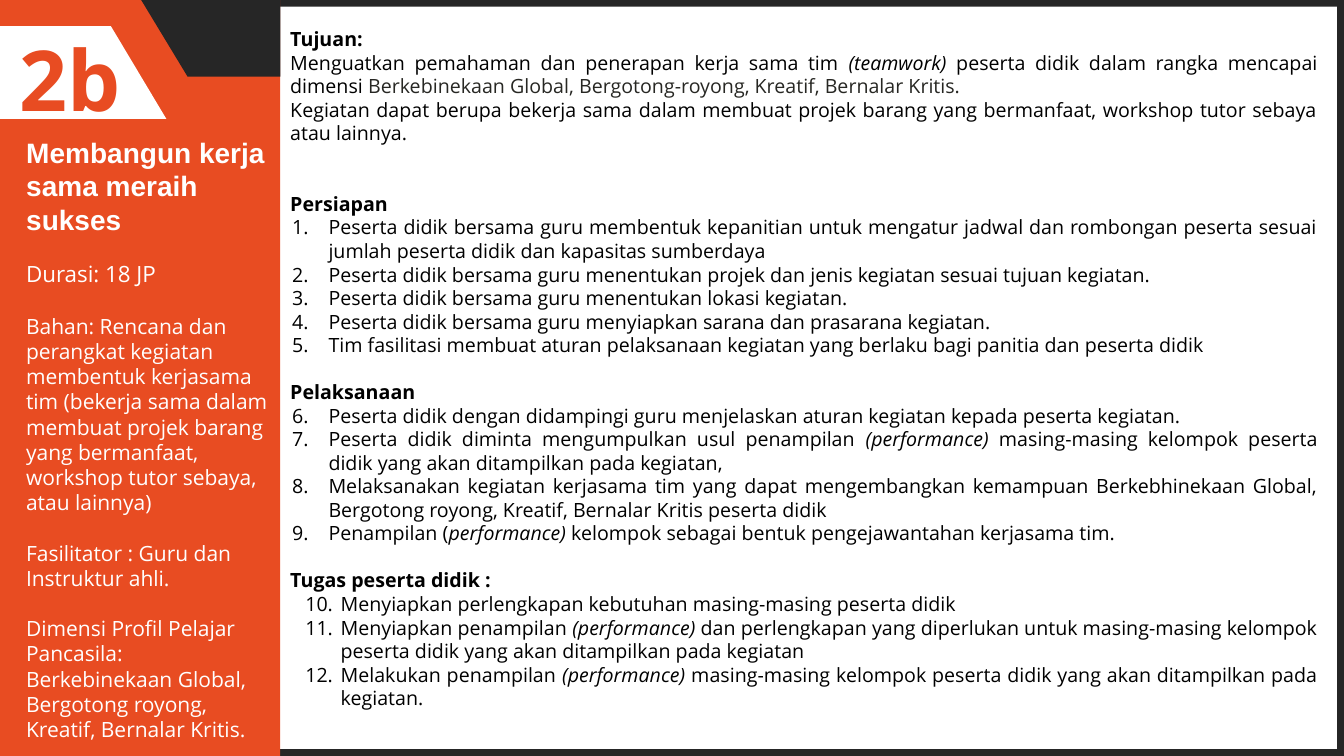
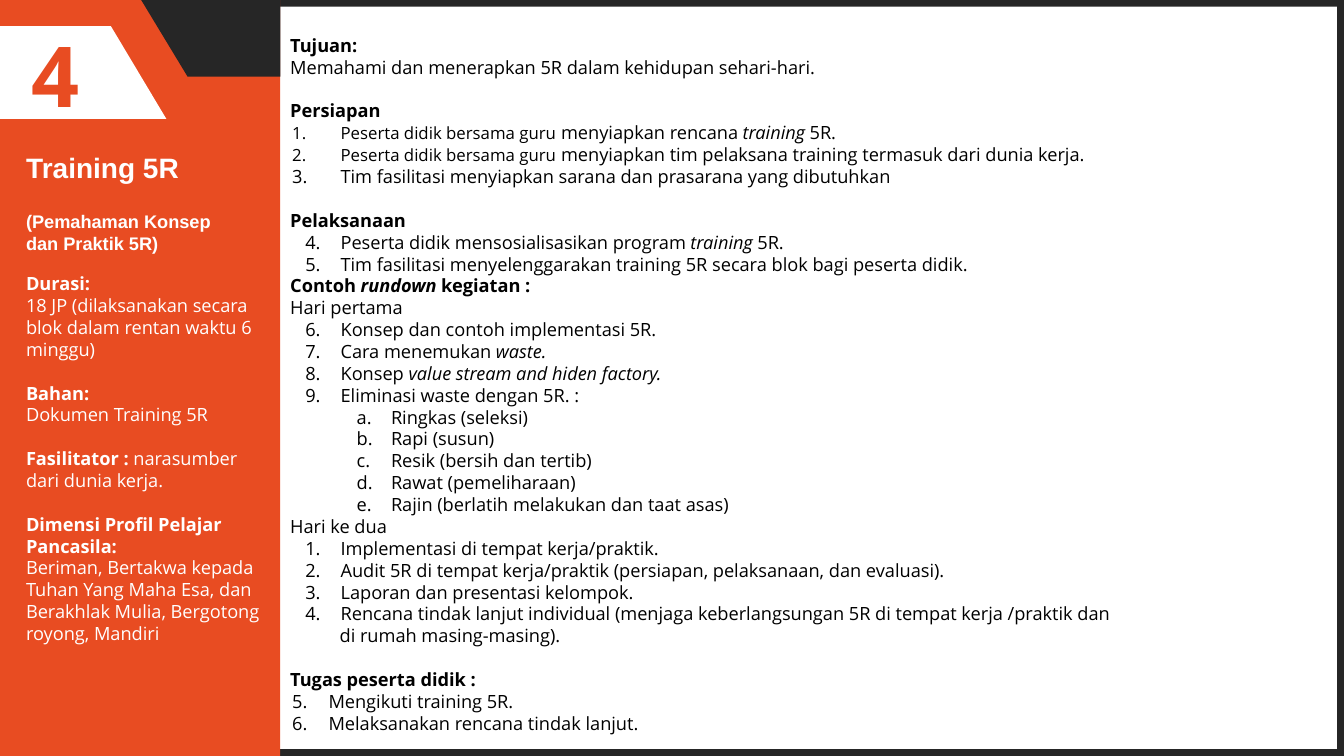
from lxml.etree import SubElement
from pptx import Presentation
from pptx.dml.color import RGBColor as RGB
from pptx.enum.shapes import MSO_SHAPE as Shape
from pptx.enum.text import MSO_ANCHOR as Anchor, PP_ALIGN as Align
from pptx.oxml.ns import qn
from pptx.util import Inches, Pt

WIDE, HIGH, PANEL = 13.33, 7.5, 2.78
COLOR = {"white": "FFFFFF", "black": "000000", "dark": "262626",
         "orange": "E84C22", "grey": "272723"}
SANS, LEAD = "Open Sans", 1.2

# list kind: left indent, hanging indent (inches), numbering scheme
LISTS = {
    "num": (0.38, 0.36, "arabicPeriod"),
    "task": (0.5, 0.35, "arabicPeriod"),
    "wide": (0.5, 0.48, "arabicPeriod"),
    "abc": (1, 0.34, "alphaLcPeriod"),
    "more": (0.49, 0, None),
}

# panel rows: gap before (pt), size, font, bold, text
# body groups: kind, blank lines before, paragraphs
# a paragraph is a string, or a list of strings and (text, style) pairs
SLIDES = [
    {
        "mark": "2b", "mark_box": (0, 0.22, 1.4, 1.11),
        "title": "Membangun kerja sama meraih sukses",
        "title_box": (0.16, 1.29, 2.62, 1.1), "panel_top": 2.53,
        "panel": [
            (0, 16, SANS, False, "Durasi: 18 JP"),
            (19, 15, SANS, False, "Bahan: Rencana dan"),
            (0, 15, SANS, False,
             "perangkat kegiatan membentuk kerjasama tim (bekerja sama dalam "
             "membuat projek barang yang bermanfaat, workshop tutor sebaya, "
             "atau lainnya)"),
            (18, 15, SANS, False, "Fasilitator : Guru dan Instruktur ahli."),
            (18, 15, SANS, False,
             "Dimensi Profil Pelajar Pancasila: Berkebinekaan Global, "
             "Bergotong royong, Kreatif, Bernalar Kritis."),
        ],
        "body_top": 0.22, "size": 14,
        "body": [
            ("head", 0, ["Tujuan:"]),
            ("text", 0, [
                ["Menguatkan pemahaman dan penerapan kerja sama tim ",
                 ("(teamwork)", "italic"),
                 " peserta didik dalam rangka mencapai dimensi ",
                 ("Berkebinekaan Global, Bergotong-royong, Kreatif, "
                  "Bernalar Kritis.", "grey")],
                "Kegiatan dapat berupa bekerja sama dalam membuat projek "
                "barang yang bermanfaat, workshop tutor sebaya atau lainnya.",
            ]),
            ("head", 2, ["Persiapan"]),
            ("num", 0, [
                "Peserta didik bersama guru membentuk kepanitian untuk "
                "mengatur jadwal dan rombongan peserta sesuai jumlah peserta "
                "didik dan kapasitas sumberdaya",
                "Peserta didik bersama guru menentukan projek dan jenis "
                "kegiatan sesuai tujuan kegiatan.",
                "Peserta didik bersama guru menentukan lokasi kegiatan.",
                "Peserta didik bersama guru menyiapkan sarana dan prasarana "
                "kegiatan.",
                "Tim fasilitasi membuat aturan pelaksanaan kegiatan yang "
                "berlaku bagi panitia dan peserta didik",
            ]),
            ("head", 1, ["Pelaksanaan"]),
            ("num", 0, [
                "Peserta didik dengan didampingi guru menjelaskan aturan "
                "kegiatan kepada peserta kegiatan.",
                ["Peserta didik diminta mengumpulkan usul penampilan ",
                 ("(performance) ", "italic"),
                 "masing-masing kelompok peserta didik yang akan ditampilkan "
                 "pada kegiatan,"],
                "Melaksanakan kegiatan kerjasama tim yang dapat mengembangkan "
                "kemampuan Berkebhinekaan Global, Bergotong royong, Kreatif, "
                "Bernalar Kritis peserta didik",
                ["Penampilan (", ("performance)", "italic"),
                 " kelompok sebagai bentuk pengejawantahan kerjasama tim."],
            ]),
            ("head", 1, ["Tugas peserta didik :"]),
            ("task", 0, [
                "Menyiapkan perlengkapan kebutuhan masing-masing peserta didik",
                ["Menyiapkan penampilan ", ("(performance)", "italic"),
                 " dan perlengkapan yang diperlukan untuk masing-masing "
                 "kelompok peserta didik yang akan ditampilkan pada kegiatan"],
                ["Melakukan penampilan ", ("(performance)", "italic"),
                 " masing-masing kelompok peserta didik yang akan "
                 "ditampilkan pada kegiatan."],
            ]),
        ],
    },
    {
        "mark": "4", "mark_box": (0, 0.18, 1.1, 1.11),
        "title": "Training 5R",
        "title_box": (0.16, 1.44, 2.62, 0.5), "panel_top": 2.04,
        "panel": [
            (0, 13, "Arial", True, "(Pemahaman Konsep"),
            (0, 13, "Arial", True, "dan Praktik 5R)"),
            (13, 13, SANS, True, "Durasi:"),
            (0, 13, SANS, False,
             "18 JP (dilaksanakan secara blok dalam rentan waktu 6 minggu)"),
            (15.6, 13, SANS, True, "Bahan:"),
            (0, 13, SANS, False, "Dokumen Training 5R"),
            (15.6, 13, SANS, False,
             [("Fasilitator : ", "bold"), "narasumber dari dunia kerja."]),
            (15.6, 13, SANS, True, "Dimensi Profil Pelajar Pancasila:"),
            (0, 13, SANS, False,
             "Beriman, Bertakwa kepada Tuhan Yang Maha Esa, dan Berakhlak "
             "Mulia, Bergotong royong, Mandiri"),
        ],
        "body_top": 0.29, "size": 13,
        "body": [
            ("head", 0, ["Tujuan:"]),
            ("text", 0, ["Memahami dan menerapkan 5R dalam kehidupan "
                         "sehari-hari."]),
            ("head", 1, ["Persiapan"]),
            ("wide", 0, [
                [("Peserta didik bersama guru", "small"),
                 " menyiapkan rencana ", ("training", "italic"), " 5R."],
                [("Peserta didik bersama guru", "small"),
                 " menyiapkan tim pelaksana training termasuk dari dunia "
                 "kerja."],
                "Tim fasilitasi menyiapkan sarana dan prasarana yang "
                "dibutuhkan",
            ]),
            ("head", 1, ["Pelaksanaan"]),
            ("task", 0, [
                ["Peserta didik mensosialisasikan program ",
                 ("training", "italic"), " 5R."],
                "Tim fasilitasi menyelenggarakan training 5R secara blok bagi "
                "peserta didik.",
            ]),
            ("head", 0, [["Contoh ", ("rundown", "italic"), " kegiatan :"]]),
            ("text", 0, ["Hari pertama"]),
            ("task", 0, [
                "Konsep dan contoh implementasi 5R.",
                ["Cara menemukan ", ("waste.", "italic")],
                ["Konsep ", ("value stream and hiden factory.", "italic")],
                "Eliminasi waste dengan 5R. :",
            ]),
            ("abc", 0, [
                "Ringkas (seleksi)",
                "Rapi (susun)",
                "Resik (bersih dan tertib)",
                "Rawat (pemeliharaan)",
                "Rajin (berlatih melakukan dan taat asas)",
            ]),
            ("text", 0, ["Hari ke dua"]),
            ("task", 0, [
                "Implementasi di tempat kerja/praktik.",
                "Audit 5R di tempat kerja/praktik (persiapan, pelaksanaan, "
                "dan evaluasi).",
                "Laporan dan presentasi kelompok.",
                "Rencana tindak lanjut individual (menjaga keberlangsungan "
                "5R di tempat kerja /praktik dan",
            ]),
            ("more", 0, ["di rumah masing-masing)."]),
            ("head", 1, ["Tugas peserta didik :"]),
            ("num", 0, ["Mengikuti training 5R.",
                        "Melaksanakan rencana tindak lanjut."]),
        ],
    },
]


def rgb(name):
    return RGB.from_string(COLOR[name])


def paint(shape, color):
    shape.fill.solid()
    shape.fill.fore_color.rgb = rgb(color)
    shape.line.fill.background()
    shape.shadow.inherit = False


def block(slide, kind, box, color):
    shape = slide.shapes.add_shape(kind, *map(Inches, box))
    paint(shape, color)
    return shape


def outline(slide, points, color):
    (x, y), *rest = [(Inches(a), Inches(b)) for a, b in points]
    pen = slide.shapes.build_freeform(x, y)
    pen.add_line_segments(rest, close=True)
    paint(pen.convert_to_shape(), color)


def text_box(slide, box):
    frame = slide.shapes.add_textbox(*map(Inches, box)).text_frame
    frame.word_wrap = True
    return frame


def set_font(font, size, name, color, bold):
    font.size, font.name, font.bold = Pt(size), name, bold
    font.color.rgb = rgb(color)


def next_para(frame):
    first = frame.paragraphs[0]
    return frame.add_paragraph() if first.runs else first


def indent(para, left, hang, scheme):
    """Indent a paragraph and number it when a scheme is given."""
    props = para._p.get_or_add_pPr()
    props.set("marL", str(Inches(left)))
    props.set("indent", str(-Inches(hang)))
    if scheme:
        tint = SubElement(props, qn("a:buClr"))
        SubElement(tint, qn("a:srgbClr"), val=COLOR["black"])
        SubElement(props, qn("a:buFont"), typeface="+mj-lt")
        SubElement(props, qn("a:buAutoNum"), type=scheme)


def add_runs(para, parts):
    for part in [parts] if isinstance(parts, str) else parts:
        text, style = (part, None) if isinstance(part, str) else part
        run = para.add_run()
        run.text = text
        if style == "italic":
            run.font.italic = True
        elif style == "bold":
            run.font.bold = True
        elif style == "small":
            run.font.size = Pt(12)
        elif style == "grey":
            run.font.color.rgb = rgb("grey")


def add_frame(slide):
    """Draw the border, side panel and corner shared by all slides."""
    edge = block(slide, Shape.FRAME, (0, 0, WIDE, HIGH), "dark")
    edge.adjustments[0] = 0.009
    block(slide, Shape.RECTANGLE, (0, 0, PANEL, HIGH), "orange")
    outline(slide, [(0, 0.26), (1.1, 0.26), (1.65, 1.18), (0, 1.18)], "white")
    outline(slide, [(PANEL, 0.76), (1.86, 0.76), (1.4, 0), (PANEL, 0)], "dark")


def add_title(slide, text, box):
    title = slide.shapes.title
    title.left, title.top, title.width, title.height = map(Inches, box)
    frame = title.text_frame
    frame.text, frame.word_wrap = text, True
    frame.vertical_anchor = Anchor.TOP
    para = frame.paragraphs[0]
    para.alignment = Align.LEFT
    set_font(para.font, 20, "Arial", "white", True)
    slide.shapes._spTree.append(title._element)  # bring in front of the panel


def add_mark(slide, text, box):
    para = text_box(slide, box).paragraphs[0]
    para.alignment = Align.CENTER
    set_font(para.font, 60, SANS, "orange", True)
    add_runs(para, text)


def add_panel(slide, top, rows):
    frame = text_box(slide, (0.16, top, 2.62, HIGH - top))
    for gap, size, name, bold, parts in rows:
        para = next_para(frame)
        para.space_before = Pt(gap)
        set_font(para.font, size, name, "white", bold)
        add_runs(para, parts)


def add_body(slide, top, size, groups):
    frame = text_box(slide, (PANEL, top, 10.39, HIGH - top))
    for kind, gap, items in groups:
        for parts in items:
            para = next_para(frame)
            para.alignment = Align.JUSTIFY
            para.space_before = Pt(gap * size * LEAD)
            if kind in LISTS:
                indent(para, *LISTS[kind])
            set_font(para.font, size, SANS, "black", kind == "head")
            add_runs(para, parts)


def main():
    deck = Presentation()
    deck.slide_width, deck.slide_height = Inches(WIDE), Inches(HIGH)
    for data in SLIDES:
        slide = deck.slides.add_slide(deck.slide_layouts[5])
        add_frame(slide)
        add_title(slide, data["title"], data["title_box"])
        add_mark(slide, data["mark"], data["mark_box"])
        add_panel(slide, data["panel_top"], data["panel"])
        add_body(slide, data["body_top"], data["size"], data["body"])
    deck.save("out.pptx")


if __name__ == "__main__":
    main()
